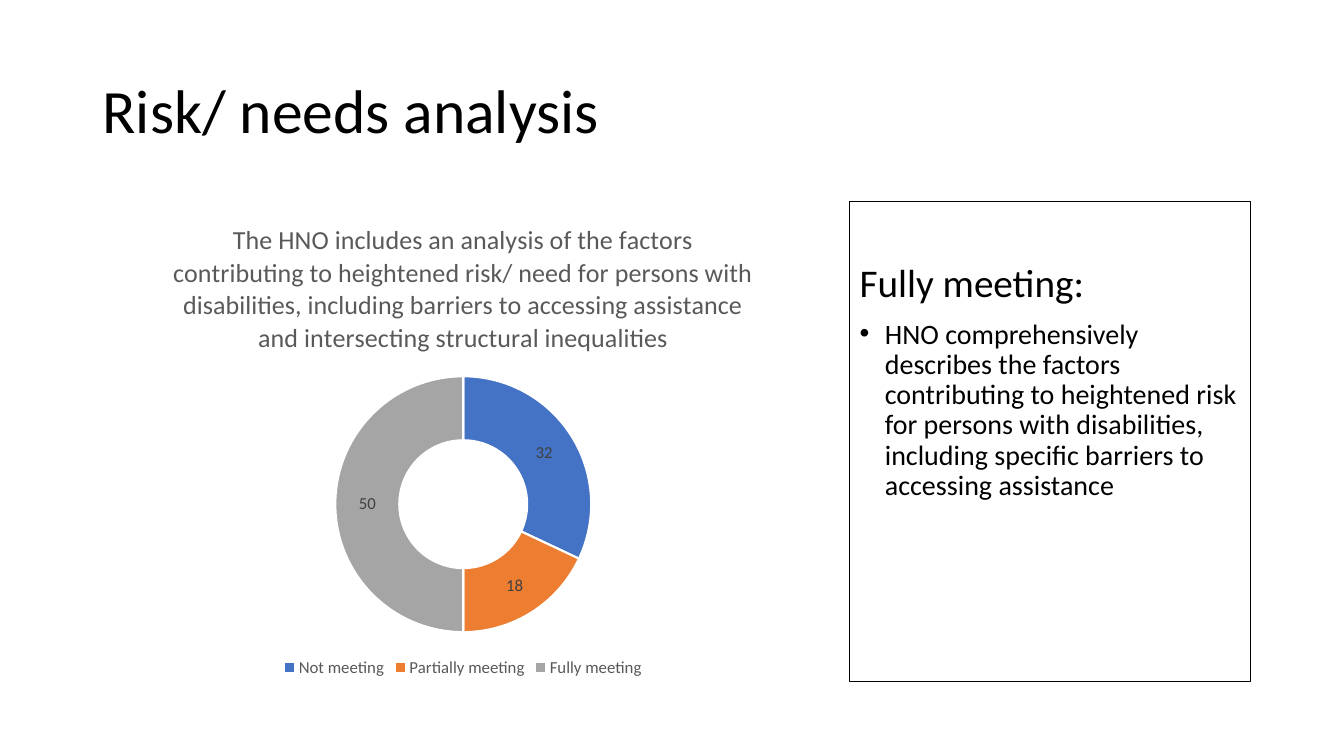
from lxml.etree import SubElement
from pptx import Presentation
from pptx.chart.data import CategoryChartData
from pptx.dml.color import RGBColor
from pptx.enum.chart import XL_CHART_TYPE, XL_LEGEND_POSITION
from pptx.enum.text import MSO_ANCHOR, MSO_AUTO_SIZE, PP_ALIGN
from pptx.oxml.ns import qn
from pptx.util import Cm, Pt

FONT = "Calibri"
COLORS = {
    "text": "000000",
    "chart_text": "595959",
    "label": "404040",
    "slice_border": "FFFFFF",
}
QUESTION = (
    "The HNO includes an analysis of the factors contributing to heightened risk/ need "
    "for persons with disabilities, including barriers to accessing assistance "
    "and intersecting structural inequalities"
)
RATINGS = [
    ("Not meeting", 32, "4472C4"),
    ("Partially meeting", 18, "ED7D31"),
    ("Fully meeting", 50, "A5A5A5"),
]


def color(name):
    return RGBColor.from_string(COLORS[name])


def format_font(font, size, color_name):
    font.name = FONT
    font.size = Pt(size)
    font.bold = False
    font.color.rgb = color(color_name)


def write_text(paragraph, text, size=20, color_name="text", line_spacing=0.9,
               space_before=0, bullet=False):
    run = paragraph.add_run()
    run.text = text
    format_font(run.font, size, color_name)
    paragraph.alignment = PP_ALIGN.LEFT
    paragraph.line_spacing = line_spacing
    paragraph.space_before = Pt(space_before)
    properties = paragraph._p.get_or_add_pPr()
    indent = Cm(0.635) if bullet else 0
    properties.set("marL", str(indent))
    properties.set("indent", str(-indent))
    if bullet:
        SubElement(properties, qn("a:buFont"), typeface="Arial")
        SubElement(properties, qn("a:buChar"), char="•")
    else:
        SubElement(properties, qn("a:buNone"))


def place(shape, left, top, width, height, anchor):
    shape.left, shape.top = Cm(left), Cm(top)
    shape.width, shape.height = Cm(width), Cm(height)
    frame = shape.text_frame
    frame.word_wrap = True
    frame.auto_size = MSO_AUTO_SIZE.NONE
    frame.vertical_anchor = anchor
    return frame


def add_title(slide):
    frame = place(slide.shapes.title, 2.33, 1.01, 29.21, 3.68, MSO_ANCHOR.MIDDLE)
    write_text(frame.paragraphs[0], "Risk/ needs analysis", size=44)


def add_criteria(slide):
    box = slide.placeholders[1]
    frame = place(box, 21.41, 5.08, 10.11, 12.09, MSO_ANCHOR.TOP)
    frame.margin_top = Cm(1.56)
    box.line.color.rgb = color("text")
    box.line.width = Pt(0.75)
    write_text(frame.paragraphs[0], "Fully meeting:", size=28)
    write_text(
        frame.add_paragraph(),
        "HNO comprehensively describes the factors contributing to heightened risk "
        "for persons with disabilities, including specific barriers to accessing assistance",
        space_before=10,
        bullet=True,
    )


def add_doughnut(slide):
    data = CategoryChartData()
    data.categories = [name for name, _, _ in RATINGS]
    data.add_series(QUESTION, [value for _, value, _ in RATINGS])
    chart = slide.shapes.add_chart(
        XL_CHART_TYPE.DOUGHNUT, Cm(2.33), Cm(5.08), Cm(18.69), Cm(12.09), data
    ).chart
    format_font(chart.font, 10, "text")

    title = chart.chart_title
    title.include_in_layout = False
    paragraph = title.text_frame.paragraphs[0]
    run = paragraph.add_run()
    run.text = QUESTION
    format_font(run.font, 18.6, "chart_text")

    chart.has_legend = True
    chart.legend.position = XL_LEGEND_POSITION.BOTTOM
    chart.legend.include_in_layout = False
    format_font(chart.legend.font, 12, "chart_text")

    plot = chart.plots[0]
    plot.vary_by_categories = True
    plot._element.find(qn("c:holeSize")).set("val", "75")
    plot.has_data_labels = True
    labels = plot.data_labels
    labels.show_value = True
    labels.show_percentage = False
    format_font(labels.font, 12, "label")

    for index, (_, _, fill) in enumerate(RATINGS):
        slice_format = plot.series[0].points[index].format
        slice_format.fill.solid()
        slice_format.fill.fore_color.rgb = RGBColor.from_string(fill)
        slice_format.line.color.rgb = color("slice_border")
        slice_format.line.width = Pt(1.5)


def main():
    presentation = Presentation()
    presentation.slide_width = Cm(33.87)
    presentation.slide_height = Cm(19.05)
    slide = presentation.slides.add_slide(presentation.slide_layouts[1])
    add_title(slide)
    add_doughnut(slide)
    add_criteria(slide)
    presentation.save("out.pptx")


if __name__ == "__main__":
    main()
